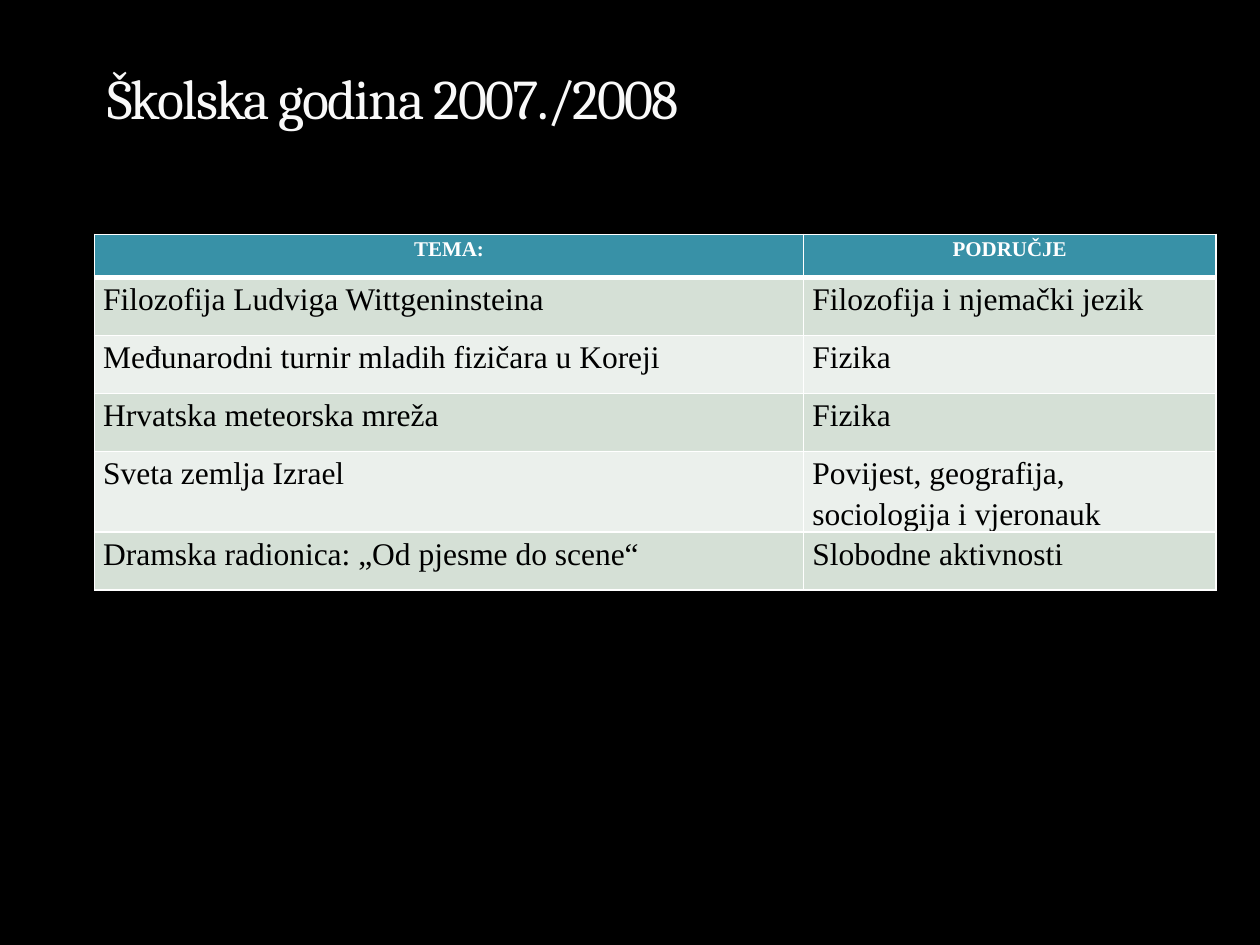
"""Builds a slide listing the school year's topics and their subject areas."""
from lxml import etree
from pptx import Presentation
from pptx.dml.color import RGBColor
from pptx.enum import text as t
from pptx.oxml import ns
from pptx.util import Pt

TITLE = "Školska godina 2007./2008"
ROWS = [
    ("TEMA:", "PODRUČJE"),
    ("Filozofija Ludviga Wittgeninsteina", "Filozofija i njemački jezik"),
    ("Međunarodni turnir mladih fizičara u Koreji", "Fizika"),
    ("Hrvatska meteorska mreža", "Fizika"),
    ("Sveta zemlja Izrael", "Povijest, geografija, sociologija i vjeronauk"),
    ("Dramska radionica: „Od pjesme do scene“", "Slobodne aktivnosti"),
]
WIDTHS = [405.2, 235.6]
HEIGHTS = [24.5, 33.2, 33.2, 33.2, 37.5, 33.2]
LEFT, TOP = 54, 134

THEME = {
    "back": "000000", "title": "F9F9F9", "head": "3891A7",
    "bands": ("EBF0EC", "D5E0D6"), "ink": "000000", "line": "FFFFFF",
    "serif": "Cambria", "body": "Times New Roman",
    "title_size": 32, "head_size": 12, "body_size": 18,
}


def paint(fill, color):
    fill.solid()
    fill.fore_color.rgb = RGBColor.from_string(color)


def write(para, words, face, size, color, bold=False):
    run = para.add_run()
    run.text = words
    font = run.font
    font.name, font.size, font.bold = face, Pt(size), bold
    font.color.rgb = RGBColor.from_string(color)
    return run


def edge(cell, side, width):
    props = cell._tc.get_or_add_tcPr()
    line = etree.Element(ns.qn(f"a:ln{side}"), w=str(Pt(width)))
    fill = etree.SubElement(line, ns.qn("a:solidFill"))
    etree.SubElement(fill, ns.qn("a:srgbClr"), val=THEME["line"])
    props.insert("LRTB".index(side), line)


def fill_cell(cell, words, row):
    head = row == 0
    paint(cell.fill, THEME["head"] if head else THEME["bands"][row % 2])
    cell.margin_left = cell.margin_right = Pt(5)
    cell.margin_top = cell.margin_bottom = 0
    para = cell.text_frame.paragraphs[0]
    para.line_spacing = 1.15
    para.space_after = Pt(0 if head else 10)
    para.alignment = t.PP_ALIGN.CENTER if head else t.PP_ALIGN.LEFT
    write(para, words, THEME["body"],
          THEME["head_size" if head else "body_size"],
          THEME["line" if head else "ink"], head)
    heavy = {(0, "B"), (1, "T")}
    for side in "LRTB":
        edge(cell, side, 3 if (row, side) in heavy else 1)


def add_title(slide):
    box = slide.shapes.title
    box.left, box.top, box.width, box.height = map(Pt, (54, 26, 612, 52.5))
    frame = box.text_frame
    frame.auto_size = t.MSO_AUTO_SIZE.NONE
    frame.vertical_anchor = t.MSO_ANCHOR.BOTTOM
    para = frame.paragraphs[0]
    para.alignment = t.PP_ALIGN.LEFT
    run = write(para, TITLE, THEME["serif"], THEME["title_size"], THEME["title"])
    run.font._element.set("spc", "-100")


def add_topics(slide):
    size = map(Pt, (LEFT, TOP, sum(WIDTHS), sum(HEIGHTS)))
    table = slide.shapes.add_table(len(ROWS), len(WIDTHS), *size).table
    for col, width in zip(table.columns, WIDTHS):
        col.width = Pt(width)
    for r, (words, height) in enumerate(zip(ROWS, HEIGHTS)):
        table.rows[r].height = Pt(height)
        for c, word in enumerate(words):
            fill_cell(table.cell(r, c), word, r)


def main():
    deck = Presentation()
    deck.slide_width, deck.slide_height = Pt(720), Pt(540)
    slide = deck.slides.add_slide(deck.slide_layouts[5])
    paint(slide.background.fill, THEME["back"])
    add_topics(slide)
    add_title(slide)
    deck.save("out.pptx")


if __name__ == "__main__":
    main()
